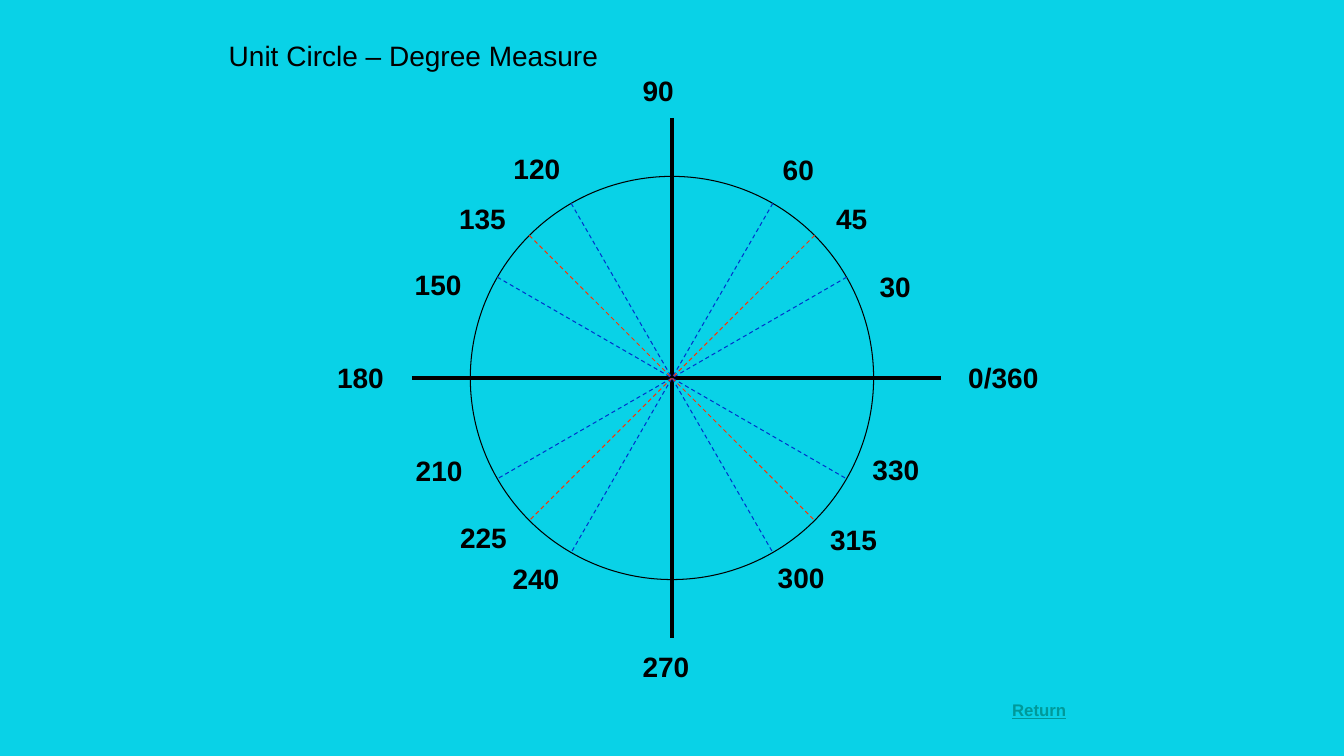
import math
import pptx
import pptx.util
import pptx.dml.color
import pptx.enum.dml
import pptx.enum.shapes
import pptx.enum.text
import pptx.oxml

# Content
BACKGROUND, BLACK, BLUE, RED, TEAL = "09D2E7", "000000", "0033CC", "FF3300", "009999"
TITLE = "Unit Circle – Degree Measure"
RETURN = "Return"
# Degree label, then its box's left and top measured from the circle's centre
DEGREES = [
    ("0/360", 2.84, -0.22), ("30", 1.96, -1.13), ("45", 1.53, -1.8),
    ("60", 1, -2.29), ("90", -0.39, -3.07), ("120", -1.67, -2.3),
    ("135", -2.21, -1.8), ("150", -2.65, -1.15), ("180", -3.42, -0.22),
    ("210", -2.64, 0.7), ("225", -2.2, 1.36), ("240", -1.68, 1.77),
    ("270", -0.39, 2.64), ("300", 0.95, 1.76), ("315", 1.47, 1.38),
    ("330", 1.89, 0.69),
]
# Diameters: angle and colour
DIAMETERS = [(60, BLUE), (120, BLUE), (150, BLUE), (30, BLUE), (135, RED), (45, RED)]

# Geometry
WIDTH, HEIGHT = 13.33, 7.5
CENTRE_X, CENTRE_Y = WIDTH / 2, HEIGHT / 2
RADIUS = 2
AXES = [(0, -2.58, 0, 2.58), (-2.58, 0, 2.67, 0)]

inch = pptx.util.Inches
deck = pptx.Presentation()
deck.slide_width, deck.slide_height = inch(WIDTH), inch(HEIGHT)
slide = deck.slides.add_slide(deck.slide_layouts[6])


def colour(hex_code):
    return pptx.dml.color.RGBColor.from_string(hex_code)


def add_text(text, left, top, width, height=0.43, size=20, ink=BLACK, bold=True, underline=None):
    box = slide.shapes.add_textbox(inch(left), inch(top), inch(width), inch(height))
    frame = box.text_frame
    frame.word_wrap = True
    frame.auto_size = pptx.enum.text.MSO_AUTO_SIZE.SHAPE_TO_FIT_TEXT
    run = frame.paragraphs[0].add_run()
    run.text = text
    run.font.name, run.font.size = "Arial", pptx.util.Pt(size)
    run.font.bold, run.font.underline = bold, underline
    run.font.color.rgb = colour(ink)


def add_line(x1, y1, x2, y2, ink=BLACK, weight=3, dash=None):
    """Draw a line between two points measured from the circle's centre."""
    line = slide.shapes.add_connector(
        pptx.enum.shapes.MSO_CONNECTOR.STRAIGHT,
        inch(CENTRE_X + x1), inch(CENTRE_Y + y1), inch(CENTRE_X + x2), inch(CENTRE_Y + y2))
    line.line.color.rgb = colour(ink)
    line.line.width = pptx.util.Pt(weight)
    line.line.dash_style = dash
    effects = pptx.oxml.parse_xml(
        '<a:effectLst xmlns:a="http://schemas.openxmlformats.org/drawingml/2006/main"/>')
    line._element.spPr.append(effects)


# Background
slide.background.fill.solid()
slide.background.fill.fore_color.rgb = colour(BACKGROUND)

# Circle
circle = slide.shapes.add_shape(
    pptx.enum.shapes.MSO_SHAPE.OVAL, inch(CENTRE_X - RADIUS), inch(CENTRE_Y - RADIUS),
    inch(2 * RADIUS), inch(2 * RADIUS))
circle.shadow.inherit = False
circle.fill.background()
circle.line.color.rgb = colour(BLACK)
circle.line.width = pptx.util.Pt(0.75)

# Axes and dashed diameters
for axis in AXES:
    add_line(*axis)
for angle, ink in DIAMETERS:
    x = RADIUS * math.cos(math.radians(angle))
    y = RADIUS * math.sin(math.radians(angle))
    add_line(x, -y, -x, y, ink, 0.75, pptx.enum.dml.MSO_LINE.DASH)

# Title, degree labels and return caption
add_text(TITLE, 2.17, 0.33, 4.2, bold=False)
for degree, dx, dy in DEGREES:
    add_text(degree, CENTRE_X + dx, CENTRE_Y + dy, 1.06 if "/" in degree else 0.76)
add_text(RETURN, 9.94, 6.89, 1.16, 0.3, size=12, ink=TEAL, underline=True)

deck.save("out.pptx")
